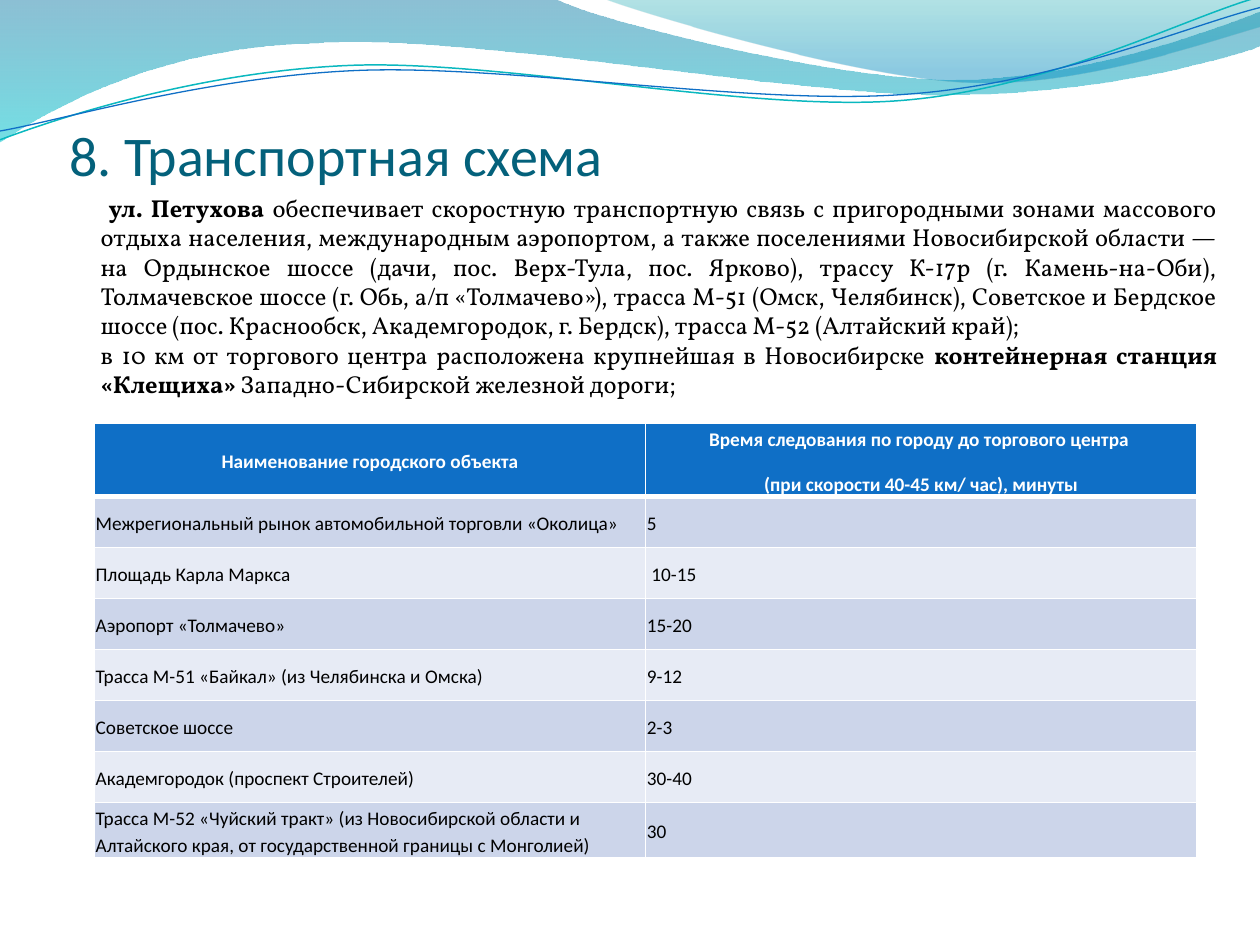
from lxml.etree import SubElement
from pptx import Presentation
from pptx.dml.color import RGBColor
from pptx.enum.text import MSO_ANCHOR, PP_ALIGN
from pptx.oxml import parse_xml
from pptx.oxml.ns import nsdecls, qn
from pptx.util import Inches, Pt

COLORS = {
    "title": "04617B", "text": "000000", "white": "FFFFFF", "header": "0F6FC6",
    "band_dark": "CCD5EA", "band_light": "E7EBF5", "teal": "0AB8BF",
    "wave_blue": "0074A1", "wave_cyan": "00C6CF",
    "crest_green": "00A1A9", "crest_blue": "008BBF",
}

WAVE = [(0, 0), (4.4, -0.01), (4.76, 0.17, 6.64, 0.63, 7.58, 0.63),
        (8.53, 0.63, 9.58, 0.26, 10, 0.09), (10.01, 0.36),
        (9.83, 0.44, 8.7, 0.76, 7.46, 0.75), (6.22, 0.75, 3.82, 0.28, 2.57, 0.34),
        (1.29, 0.36, 0.46, 0.83, -0.01, 1.13), (0, 0)]
CREST = [(4.79, -0.01), (5.09, 0.11, 6.82, 0.62, 7.69, 0.65),
         (8.56, 0.69, 9.61, 0.32, 10, 0.21), (10, 0), (4.79, -0.01)]
TEAL_LINE = [(0, 1.11), (0.48, 0.93, 1.58, 0.57, 2.77, 0.52),
             (3.95, 0.47, 5.93, 0.89, 7.13, 0.8), (8.33, 0.71, 9.38, 0.15, 9.98, -0.02)]
BLUE_LINE = [(0, 1.04), (0.47, 0.96, 1.64, 0.61, 2.83, 0.56),
             (4.03, 0.51, 5.97, 0.84, 7.17, 0.75), (8.36, 0.67, 9.41, 0.21, 10, 0.06)]

BODY = [
    [(" ", False), ("ул. Петухова", True),
     (" обеспечивает скоростную транспортную связь с пригородными зонами массового отдыха "
      "населения, международным аэропортом, а также поселениями Новосибирской области — на "
      "Ордынское шоссе (дачи, пос. Верх-Тула, пос. Ярково), трассу К-17р (г. Камень-на-Оби), "
      "Толмачевское шоссе (г. Обь, а/п «Толмачево»), трасса М-51 (Омск, Челябинск), Советское "
      "и Бердское шоссе (пос. Краснообск, Академгородок, г. Бердск), трасса М-52 "
      "(Алтайский край);", False)],
    [("в 10 км от торгового центра расположена крупнейшая в Новосибирске ", False),
     ("контейнерная станция «Клещиха» ", True),
     ("Западно-Сибирской железной дороги; ", False)],
]
HEADER = [["Наименование городского объекта"],
          ["Время следования по городу до торгового центра ",
           "(при скорости 40-45 км/ час), минуты"]]
TRAVEL_TIMES = [
    ("Межрегиональный рынок автомобильной торговли «Околица»", "5"),
    ("Площадь Карла Маркса", " 10-15"),
    ("Аэропорт «Толмачево»", "15-20"),
    ("Трасса М-51 «Байкал» (из Челябинска и Омска)", "9-12"),
    ("Советское шоссе", "2-3"),
    ("Академгородок (проспект Строителей)", "30-40"),
    ("Трасса М-52 «Чуйский тракт» (из Новосибирской области и Алтайского края, "
     "от государственной границы с Монголией)", "30"),
]


def color(name):
    return RGBColor.from_string(COLORS[name])


def pairs(segment):
    """Return the points of a segment in EMU."""
    return [(Inches(x), Inches(y)) for x, y in zip(segment[::2], segment[1::2])]


class SlideBuilder:
    """Draws styled elements on the current slide."""

    title_font = "Calibri"
    body_font = "Vollkorn"

    def __init__(self, page):
        self.page = page

    def outline(self, segments, close):
        """Draw an outline whose six-number segments are cubic curves."""
        start, *points = [point for segment in segments for point in pairs(segment)]
        builder = self.page.shapes.build_freeform(*start)
        builder.add_line_segments(points, close=close)
        shape = builder.convert_to_shape()
        shape.shadow.inherit = False
        lines = iter(list(shape.element.spPr.iter(qn("a:lnTo"))))
        for segment in segments[1:]:
            first, *others = [next(lines) for _ in pairs(segment)]
            if others:
                first.tag = qn("a:cubicBezTo")
            for line in others:
                first.append(line[0])
                line.getparent().remove(line)
        return shape

    def wave(self, segments, stops):
        shape = self.outline(segments, True)
        shape.line.fill.background()
        shape.fill.gradient()
        shape.fill.gradient_angle = 270
        for stop, (position, name, _) in zip(shape.fill.gradient_stops, stops):
            stop.color.rgb = color(name)
            stop.position = position
        tints = shape.element.spPr.iter(qn("a:srgbClr"))
        for tint, (_, _, opacity) in zip(tints, stops):
            SubElement(tint, qn("a:alpha")).set("val", str(opacity * 1000))

    def curve(self, segments, name, width):
        shape = self.outline(segments, False)
        shape.fill.background()
        shape.line.color.rgb = color(name)
        shape.line.width = Pt(width)

    def span(self, para, text, size, font, name, bold=False):
        span = para.add_run()
        span.text = text
        span.font.size = Pt(size)
        span.font.name = font
        span.font.bold = bold
        span.font.color.rgb = color(name)

    def text_box(self, left, top, width, height):
        box = self.page.shapes.add_textbox(*map(Inches, (left, top, width, height)))
        box.text_frame.word_wrap = True
        return box.text_frame

    def title(self, text):
        frame = self.text_box(0.55, 0.62, 9, 0.87)
        frame.vertical_anchor = MSO_ANCHOR.BOTTOM
        frame.margin_left = frame.margin_right = frame.margin_bottom = 0
        self.span(frame.paragraphs[0], text, 32, self.title_font, "title")

    def body(self, paragraphs):
        frame = self.text_box(0.7, 1.48, 9.06, 1.75)
        for index, spans in enumerate(paragraphs):
            para = frame.add_paragraph() if index else frame.paragraphs[0]
            para.alignment = PP_ALIGN.JUSTIFY
            for text, bold in spans:
                self.span(para, text, 14, self.body_font, "text", bold)

    def cell(self, cell, lines, fill, name, heading, borders):
        cell.fill.solid()
        cell.fill.fore_color.rgb = color(fill)
        cell.vertical_anchor = MSO_ANCHOR.MIDDLE
        cell.margin_left = cell.margin_right = Inches(0.01)
        cell.margin_top = cell.margin_bottom = Inches(0.01)
        for index, line in enumerate(lines):
            para = cell.text_frame.add_paragraph() if index else cell.text_frame.paragraphs[0]
            para.alignment = PP_ALIGN.CENTER if heading else PP_ALIGN.LEFT
            para.line_spacing = 1.15
            para.space_after = Pt(10)
            self.span(para, line, 11, self.title_font, name, heading)
        properties = cell._tc.get_or_add_tcPr()
        for index, (side, width) in enumerate(borders.items()):
            properties.insert(index, parse_xml(
                f'<a:ln{side} {nsdecls("a")} w="{Pt(width)}"><a:solidFill>'
                f'<a:srgbClr val="{COLORS["white"]}"/></a:solidFill></a:ln{side}>'))

    def table(self, header, rows):
        grid = [header] + [[[text] for text in row] for row in rows]
        table = self.page.shapes.add_table(
            len(grid), 2, *map(Inches, (0.75, 3.36, 8.75, 3.24))).table
        for row_index, row in enumerate(grid):
            heading = row_index == 0
            fill = "header" if heading else ("band_light", "band_dark")[row_index % 2]
            borders = {"L": 1, "R": 1, "T": 3 if row_index == 1 else 1, "B": 3 if heading else 1}
            for column_index, lines in enumerate(row):
                self.cell(table.cell(row_index, column_index), lines, fill,
                          "white" if heading else "text", heading, borders)


def main():
    deck = Presentation()
    deck.slide_width, deck.slide_height = Inches(10), Inches(7.5)
    builder = SlideBuilder(deck.slides.add_slide(deck.slide_layouts[6]))
    builder.wave(WAVE, [(0, "wave_blue", 45), (1, "wave_cyan", 55)])
    builder.wave(CREST, [(0, "crest_green", 30), (0.8, "crest_blue", 45)])
    builder.curve(TEAL_LINE, "teal", 0.85)
    builder.curve(BLUE_LINE, "header", 0.75)
    builder.title("8. Транспортная схема")
    builder.body(BODY)
    builder.table(HEADER, TRAVEL_TIMES)
    deck.save("out.pptx")


if __name__ == "__main__":
    main()
